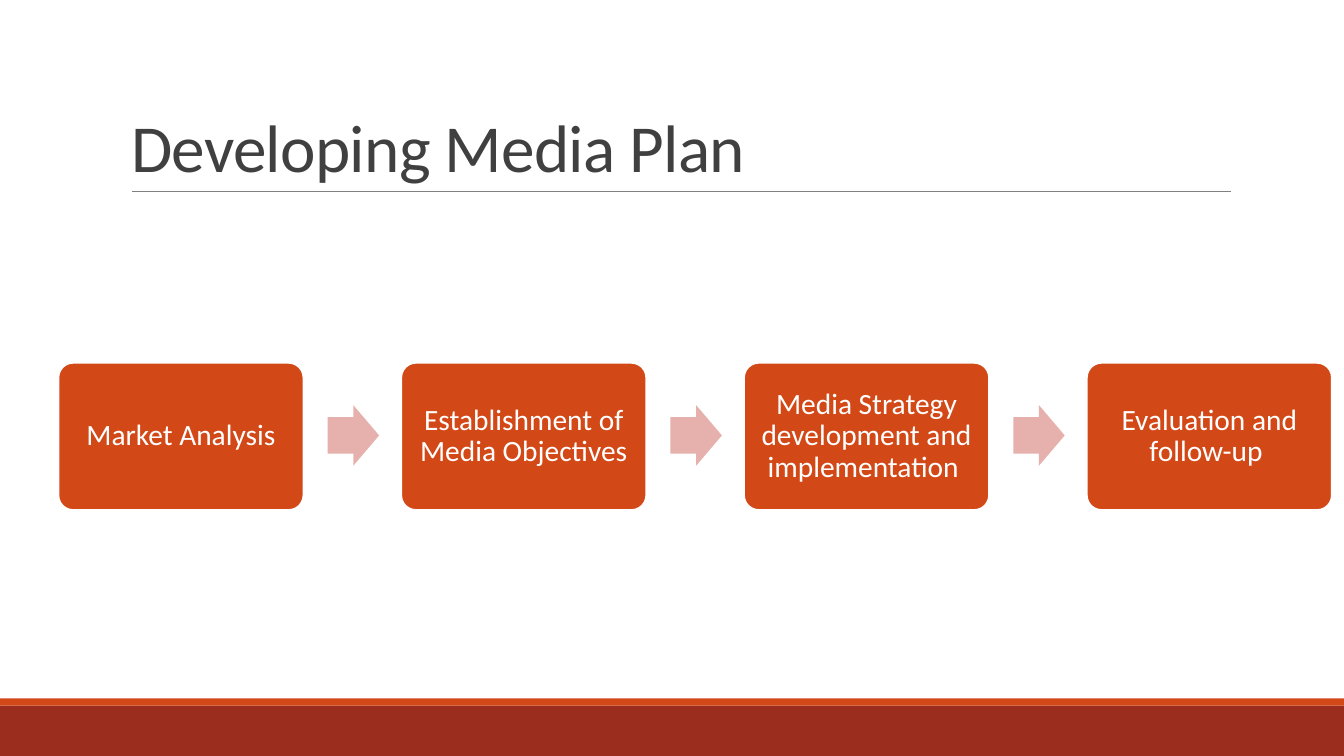
from lxml import etree
from pptx import Presentation
from pptx.dml.color import RGBColor
from pptx.enum.shapes import MSO_CONNECTOR, MSO_SHAPE
from pptx.enum.text import MSO_ANCHOR, MSO_AUTO_SIZE, PP_ALIGN
from pptx.oxml.ns import qn
from pptx.util import Inches, Pt

RECT = MSO_SHAPE.RECTANGLE
ROUND = MSO_SHAPE.ROUNDED_RECTANGLE
ARROW = MSO_SHAPE.RIGHT_ARROW
FONT = "Calibri"
ORANGE = "D34817"


def color(code):
    return RGBColor.from_string(code)


def add_block(kind, left, top, width, height, fill):
    block = slide.shapes.add_shape(
        kind, Inches(left), Inches(top), Inches(width), Inches(height))
    block.shadow.inherit = False
    block.fill.solid()
    block.fill.fore_color.rgb = color(fill)
    block.line.fill.background()
    return block


deck = Presentation()
deck.slide_width = Inches(13.33)
deck.slide_height = Inches(7.5)
slide = deck.slides.add_slide(deck.slide_layouts[5])

# Footer bands and title rule
add_block(RECT, 0, 7, 13.33, 0.5, "9B2D1F")
add_block(RECT, 0, 6.93, 13.33, 0.07, ORANGE)
rule = slide.shapes.add_connector(
    MSO_CONNECTOR.STRAIGHT, Inches(1.31), Inches(1.9), Inches(12.21), Inches(1.9))
rule.line.color.rgb = color("808080")
rule.line.width = Pt(0.5)
etree.SubElement(rule._element.spPr, qn("a:effectLst"))

# Title
title = slide.shapes.title
title.left, title.top = Inches(1.2), Inches(0.31)
title.width, title.height = Inches(11), Inches(1.59)
frame = title.text_frame
frame.text = "Developing Media Plan"
frame.word_wrap = True
frame.auto_size = MSO_AUTO_SIZE.NONE
frame.vertical_anchor = MSO_ANCHOR.BOTTOM
para = frame.paragraphs[0]
para.alignment = PP_ALIGN.LEFT
para.line_spacing = 0.85
para.font.name = FONT
para.font.size = Pt(48)
para.font.color.rgb = color("404040")
para.runs[0].font._element.set("spc", "-50")

# Process steps, with an arrow between each pair
steps = [
    "Market Analysis",
    "Establishment of Media Objectives",
    "Media Strategy development and implementation ",
    "Evaluation and follow-up ",
]
START, PITCH = 0.58, 3.4
for i, step in enumerate(steps):
    left = START + i * PITCH
    if i:
        arrow = add_block(ARROW, left - 0.73, 4.02, 0.51, 0.6, "E6B1AC")
        arrow.adjustments[0] = 0.6
        arrow.adjustments[1] = 0.5
    box = add_block(ROUND, left, 3.6, 2.43, 1.46, ORANGE)
    box.adjustments[0] = 0.1
    box.line.color.rgb = color("FFFFFF")
    box.line.width = Pt(1.25)
    frame = box.text_frame
    frame.text = step
    frame.word_wrap = True
    frame.vertical_anchor = MSO_ANCHOR.MIDDLE
    frame.margin_left = frame.margin_right = Inches(0.09)
    frame.margin_top = frame.margin_bottom = Inches(0.09)
    para = frame.paragraphs[0]
    para.alignment = PP_ALIGN.CENTER
    para.line_spacing = 0.9
    para.font.name = FONT
    para.font.size = Pt(21)
    para.font.color.rgb = color("FFFFFF")

deck.save("out.pptx")
